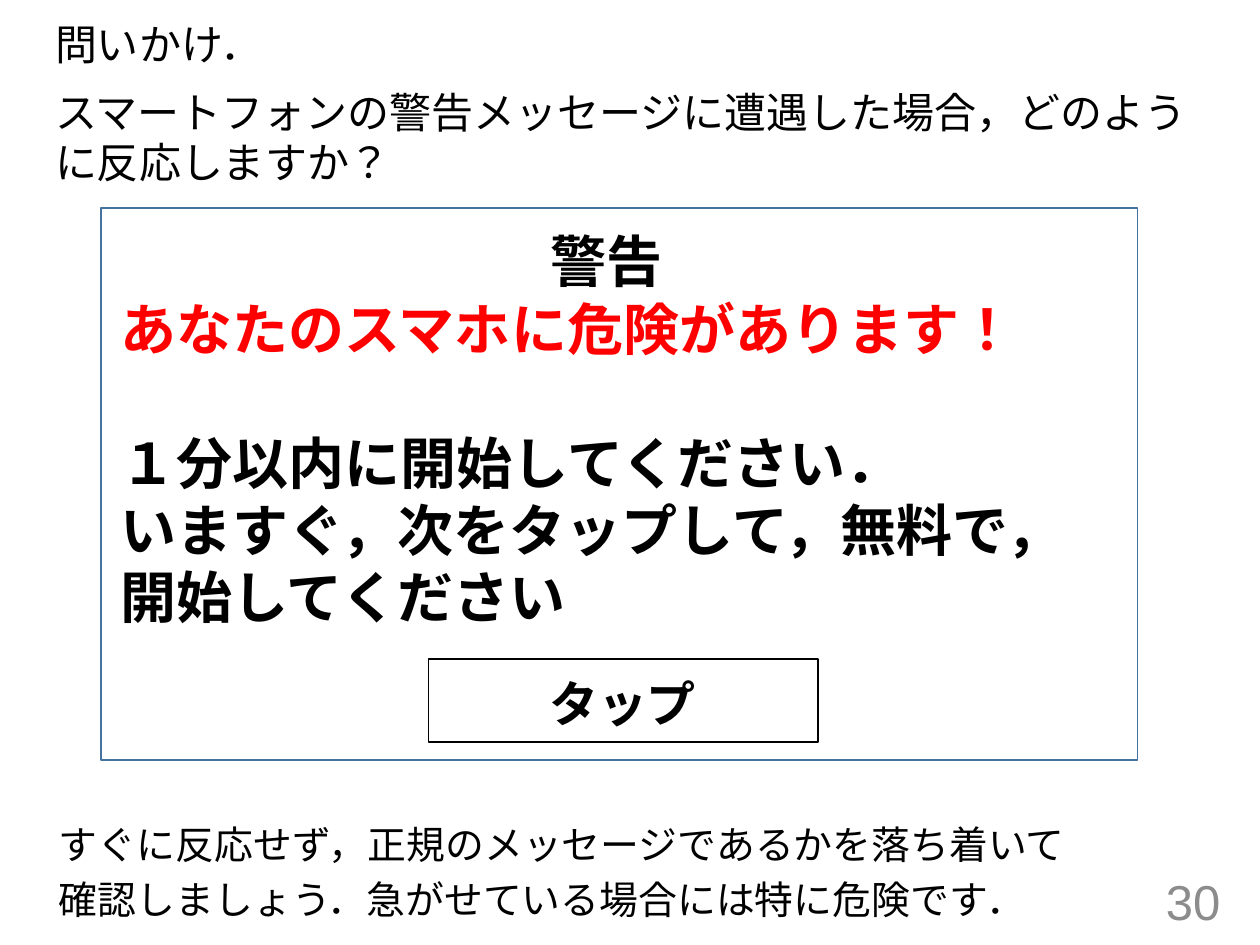
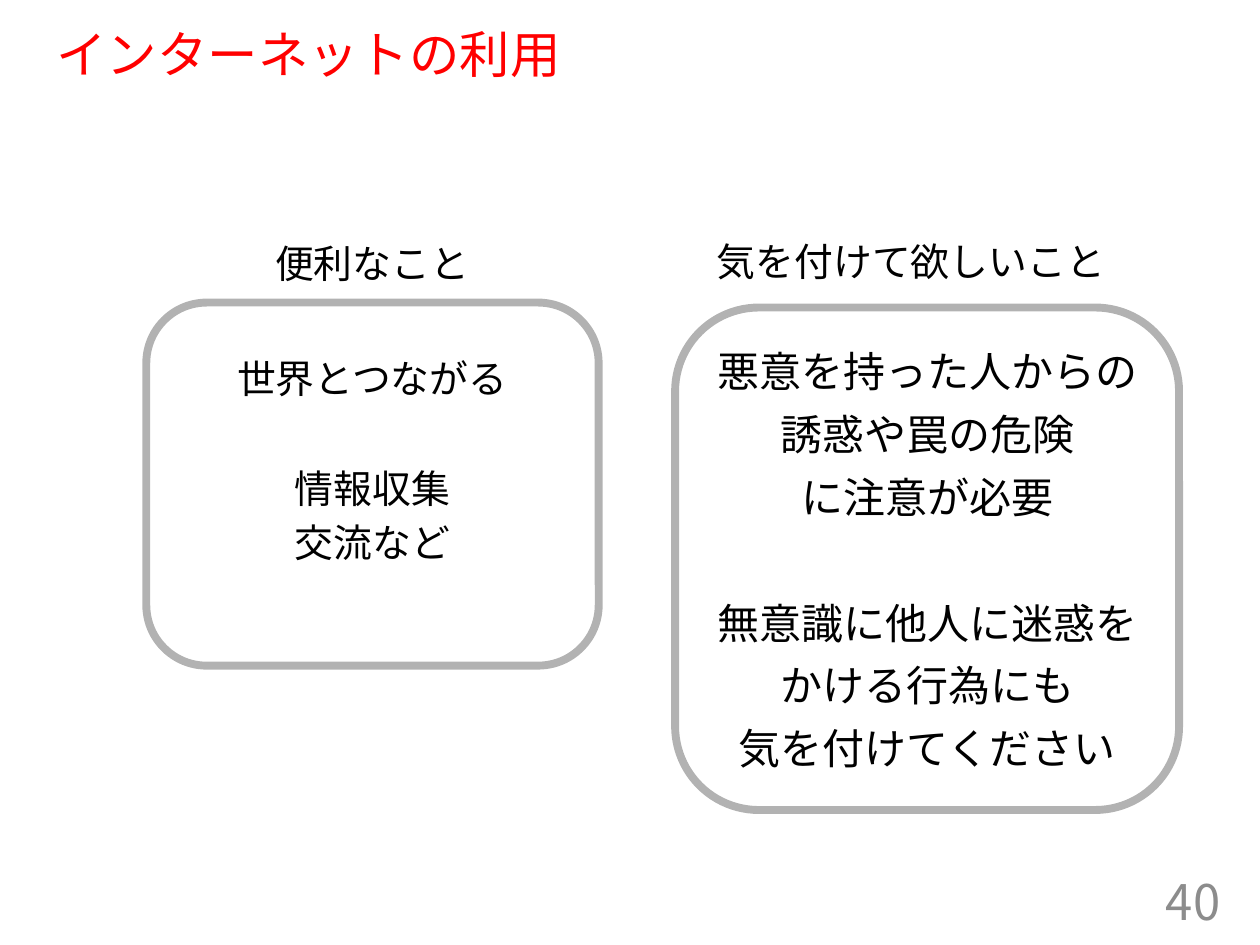
from lxml.etree import SubElement
from pptx import Presentation
from pptx.dml.color import RGBColor
from pptx.enum.lang import MSO_LANGUAGE_ID
from pptx.enum.shapes import MSO_SHAPE
from pptx.enum.text import MSO_ANCHOR, PP_ALIGN
from pptx.oxml.ns import qn
from pptx.util import Cm, Pt

COLORS = {"ink": "000000", "alert": "FF0000", "number": "8C8C8C", "warning_edge": "43739E"}
JAPANESE_FONT = "Noto Sans CJK JP"
LINE_HEIGHT = 1.2  # line pitch of single spacing, in font sizes
NARROW_INSETS = {"margin_left": Cm(0.15), "margin_right": Cm(0.15),
                 "margin_top": Cm(0.08), "margin_bottom": Cm(0.08)}


def rgb(name):
    return RGBColor.from_string(COLORS[name])


def set_all(target, values):
    for name, value in values.items():
        setattr(target, name, value)


def inside(box, left, top, width, height):
    """Place a part by its offset from the corner of a box."""
    return box[0] + left, box[1] + top, width, height


def add_text(slide, box, lines, size, font=JAPANESE_FONT, color="ink", bold=False,
             align=PP_ALIGN.LEFT, spacing=1, gap=0, extra_line_before=(), accents=(),
             aligns=None, frame_format=None):
    """Write one paragraph per line; lines in extra_line_before start a new group."""
    frame = slide.shapes.add_textbox(*map(Cm, box)).text_frame
    set_all(frame, {"word_wrap": True, **(frame_format or {})})
    pitch = size * LINE_HEIGHT * spacing
    for index, line in enumerate(lines):
        paragraph = frame.paragraphs[0] if index == 0 else frame.add_paragraph()
        before = gap if index else 0
        if index in extra_line_before:
            before += pitch + gap
        set_all(paragraph, {"alignment": (aligns or {}).get(index, align),
                            "line_spacing": Pt(pitch), "space_before": Pt(before)})
        run = paragraph.add_run()
        run.text = line
        set_all(run.font, {"size": Pt(size), "name": font, "bold": bold,
                           "language_id": MSO_LANGUAGE_ID.JAPANESE})
        run.font.color.rgb = rgb("alert" if index in accents else color)
        SubElement(run.font._element, qn("a:ea"), typeface=JAPANESE_FONT)


def add_outline(slide, box, kind, color, width, opacity=None):
    outline = slide.shapes.add_shape(kind, *map(Cm, box))
    outline.shadow.inherit = False
    outline.fill.background()
    outline.line.color.rgb = rgb(color)
    outline.line.width = Pt(width)
    if opacity is not None:
        tint = outline.line._ln.find(".//" + qn("a:srgbClr"))
        SubElement(tint, qn("a:alpha"), val=str(opacity * 1000))


def add_page_number(slide, number, font):
    add_text(slide, (19.13, 17.65, 5.72, 1.02), [str(number)], 28, font, "number",
             align=PP_ALIGN.RIGHT, frame_format={"vertical_anchor": MSO_ANCHOR.MIDDLE})


def add_warning(slide, box):
    add_outline(slide, box, MSO_SHAPE.RECTANGLE, "warning_edge", 1)
    add_text(slide, inside(box, 0.15, 0.26, 20.09, 8.46),
             ["警告", "あなたのスマホに危険があります！", "１分以内に開始してください．",
              "いますぐ，次をタップして，無料で，", "開始してください"],
             32, "Calibri", bold=True, extra_line_before=(2,), accents=(1,),
             aligns={0: PP_ALIGN.CENTER})
    # Tap button
    add_outline(slide, inside(box, 6.61, 9.09, 7.85, 1.68), MSO_SHAPE.RECTANGLE, "ink", 1)
    add_text(slide, inside(box, 8.79, 9.27, 3.51, 1.45), ["タップ"], 28, "Calibri",
             bold=True, frame_format={"word_wrap": False})


def add_topic(slide, box, heading, heading_place, lines, lines_place, size, spacing,
              group_start, heading_format=None):
    """Rounded frame with a heading above it and centred lines in it."""
    add_outline(slide, box, MSO_SHAPE.ROUNDED_RECTANGLE, "ink", 4.5, opacity=30)
    add_text(slide, inside(box, *heading_place), [heading], 22.2, align=PP_ALIGN.CENTER,
             spacing=0.9, frame_format=heading_format)
    add_text(slide, inside(box, *lines_place), lines, size, align=PP_ALIGN.CENTER,
             spacing=spacing, gap=10, extra_line_before=(group_start,),
             frame_format=NARROW_INSETS)


def build_question_slide(slide):
    add_text(slide, (0.86, 0.25, 23.5, 14.81),
             ["問いかけ．",
              "スマートフォンの警告メッセージに遭遇した場合，どのように反応しますか？"],
             24, "Arial", gap=10)
    add_warning(slide, (2.03, 4.19, 20.9, 11.13))
    # Advice
    add_text(slide, (0.94, 16.61, 23.5, 2.24),
             ["すぐに反応せず，正規のメッセージであるかを落ち着いて",
              "確認しましょう．急がせている場合には特に危険です．"],
             22.2, "Arial", spacing=0.8, gap=10)
    add_page_number(slide, 30, "Arial")


def build_internet_slide(slide):
    add_text(slide, (0.89, 0.48, 23.5, 1.3), ["インターネットの利用"], 28.8, color="alert",
             spacing=0.9, frame_format={"vertical_anchor": MSO_ANCHOR.MIDDLE})
    # Benefits
    add_topic(slide, (2.95, 6.1, 9.12, 7.32), "便利なこと", (1.06, -1.3, 6.99, 1.12),
              ["世界とつながる", "情報収集", "交流など"], (1.06, 1.16, 6.99, 4.32),
              22.2, 0.8, group_start=1)
    # Cautions
    add_topic(slide, (13.61, 6.2, 10.16, 10.13), "気を付けて欲しいこと",
              (0.54, -1.4, 8.43, 1.7),
              ["悪意を持った人からの", "誘惑や罠の危険", "に注意が必要",
               "無意識に他人に迷惑を", "かける行為にも", "気を付けてください"],
              (0.54, 0.79, 9.09, 4.32), 24, 0.9, group_start=3,
              heading_format=NARROW_INSETS)
    add_page_number(slide, 40, JAPANESE_FONT)


def main():
    deck = Presentation()
    set_all(deck, {"slide_width": Cm(25.4), "slide_height": Cm(19.05)})
    for build in (build_question_slide, build_internet_slide):
        build(deck.slides.add_slide(deck.slide_layouts[6]))
    deck.save("out.pptx")


if __name__ == "__main__":
    main()
